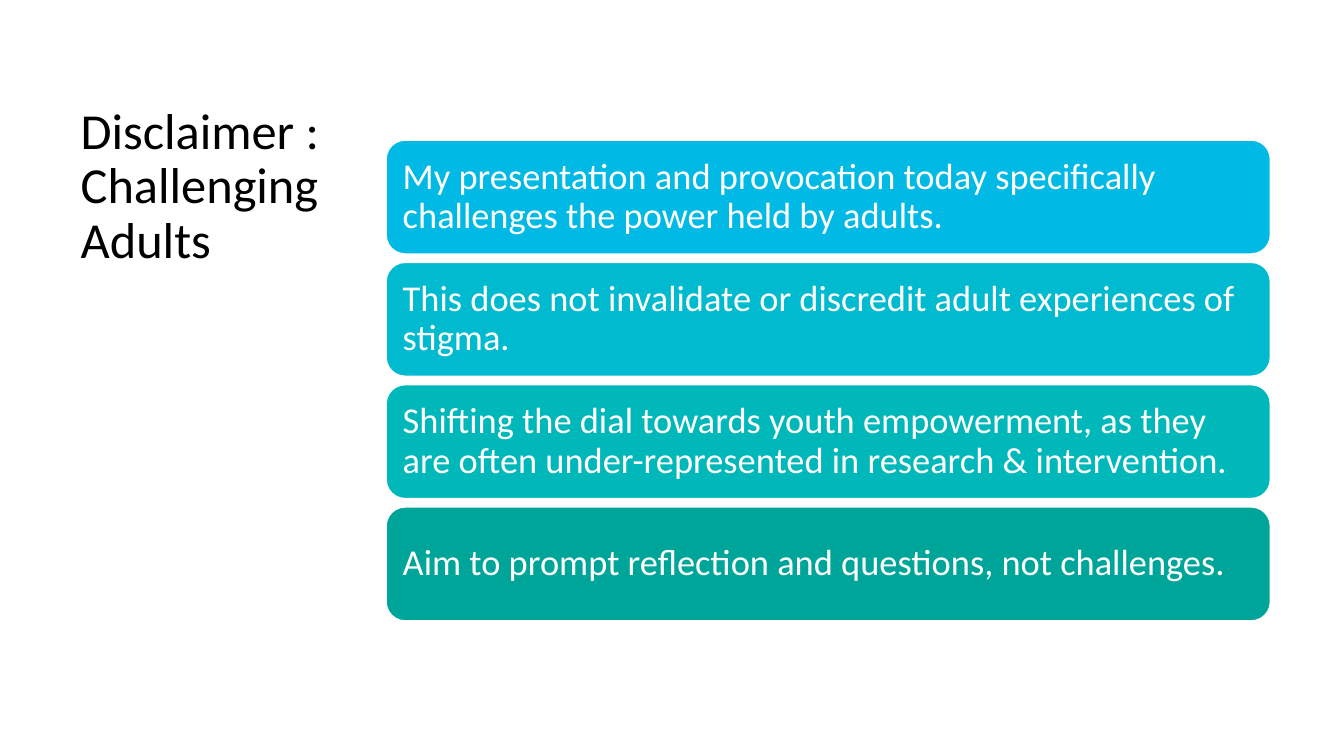
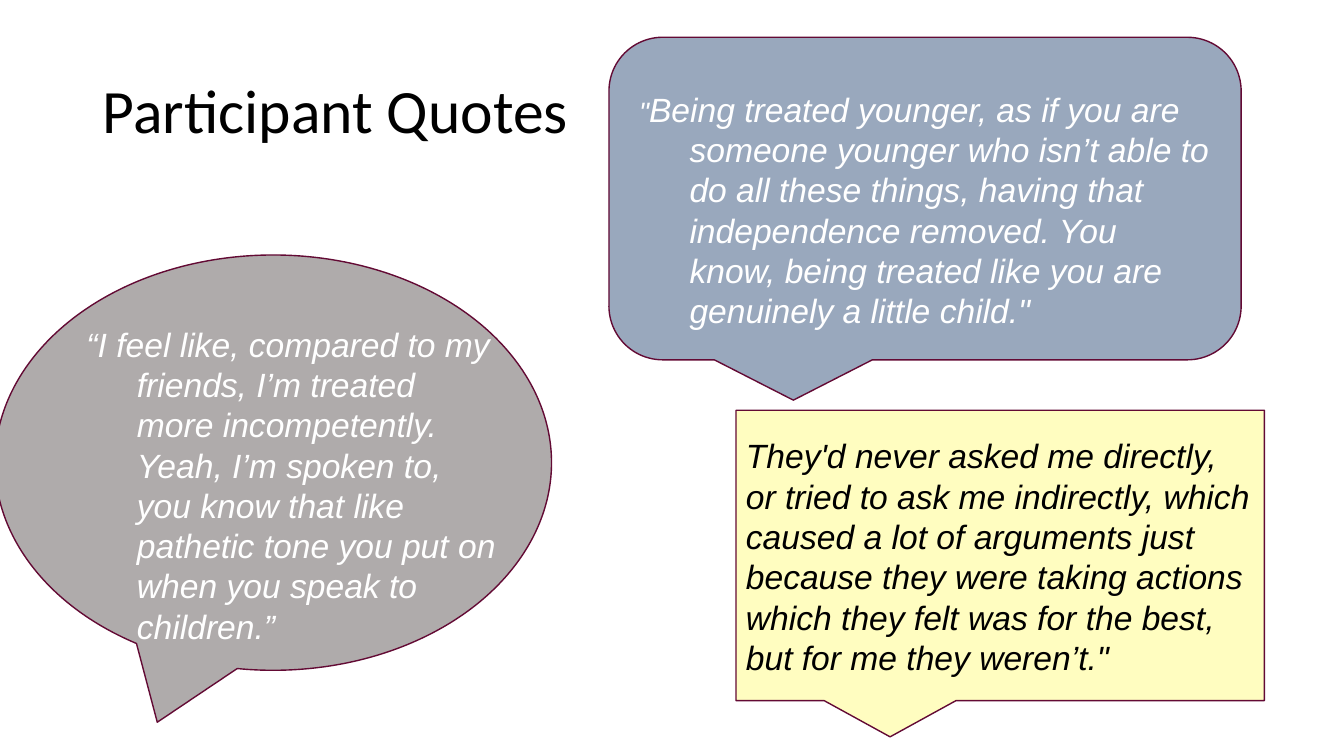
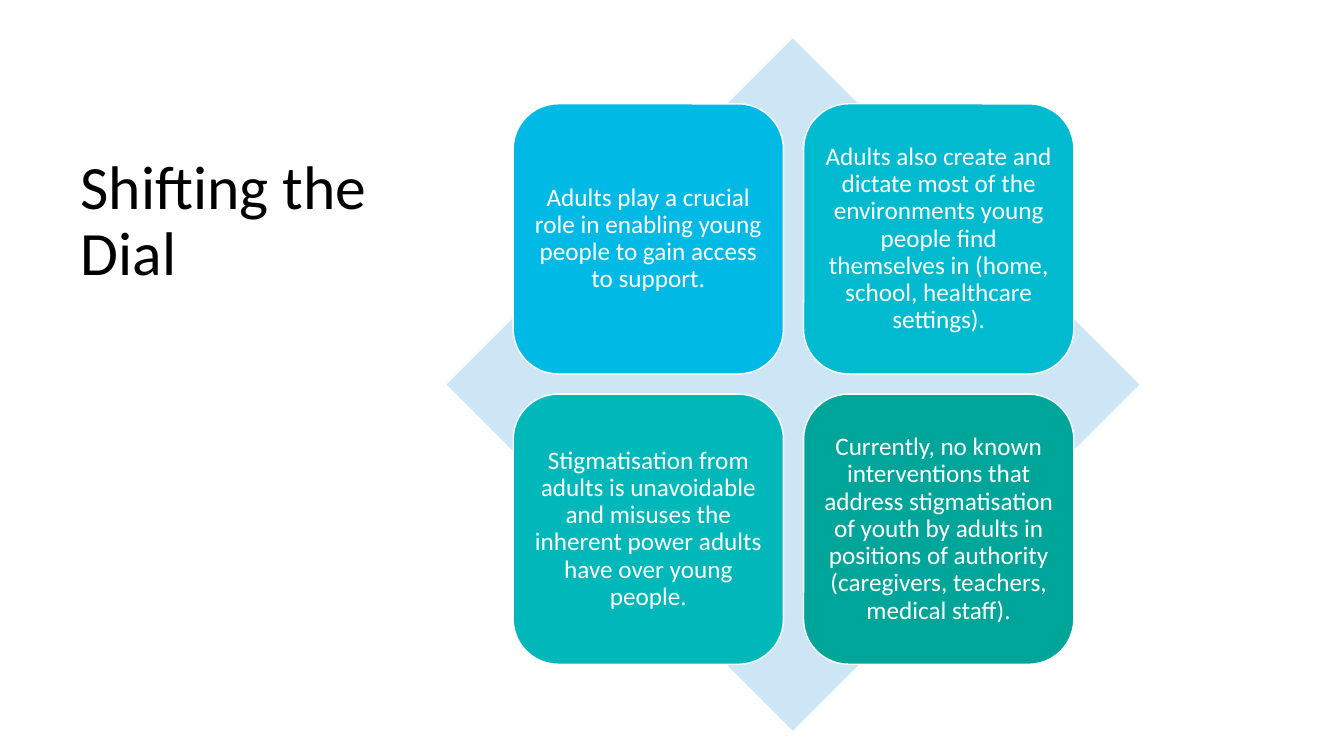
from dataclasses import dataclass

from pptx import Presentation
from pptx.dml.color import RGBColor
from pptx.enum.shapes import MSO_SHAPE
from pptx.enum.text import MSO_ANCHOR, MSO_AUTO_SIZE, PP_ALIGN
from pptx.util import Inches, Pt

ROUND_RECT, DIAMOND = MSO_SHAPE.ROUNDED_RECTANGLE, MSO_SHAPE.DIAMOND
ROUND_CALLOUT = MSO_SHAPE.ROUNDED_RECTANGULAR_CALLOUT
OVAL_CALLOUT = MSO_SHAPE.OVAL_CALLOUT
RECT_CALLOUT = MSO_SHAPE.RECTANGULAR_CALLOUT
TOP, MIDDLE = MSO_ANCHOR.TOP, MSO_ANCHOR.MIDDLE
LEFT, CENTER = PP_ALIGN.LEFT, PP_ALIGN.CENTER
NO_FIT = MSO_AUTO_SIZE.NONE
TITLE_ONLY = 5


@dataclass(frozen=True)
class Theme:
    head_font: str = "Calibri"
    quote_font: str = "Arial"
    ink: str = "000000"
    paper: str = "FFFFFF"
    steps: tuple = ("00B9E4", "00BACF", "00B7BA", "00A599")
    diamond: str = "CCE6F5"
    callout_line: str = "630A34"
    blue_grey: str = "99A8BD"
    grey: str = "AFABAB"
    yellow: str = "FFFDC0"
    title: int = 44
    small_title: int = 36
    bar: int = 26
    tile: int = 18
    quote: int = 24
    quote_mark: int = 20
    tight: float = 0.9


class Deck:
    """Holds the style and the slide being built."""

    def __init__(self, theme):
        self.theme = theme
        self.prs = Presentation()
        self.prs.slide_width, self.prs.slide_height = Inches(13.33), Inches(7.5)
        self.slide = None

    def run(self, p, text, font, size, color, italic=False):
        r = p.add_run()
        r.text = text
        r.font.name, r.font.size, r.font.italic = font, Pt(size), italic
        r.font.color.rgb = RGBColor.from_string(color)

    def new_slide(self, title, box, size, anchor=TOP):
        """Add a slide and set its title."""
        t = self.theme
        self.slide = self.prs.slides.add_slide(self.prs.slide_layouts[TITLE_ONLY])
        sp = self.slide.shapes.title
        sp.left, sp.top, sp.width, sp.height = map(Inches, box)
        tf = sp.text_frame
        tf.word_wrap, tf.auto_size, tf.vertical_anchor = True, NO_FIT, anchor
        p = tf.paragraphs[0]
        p.alignment, p.line_spacing = LEFT, t.tight
        self.run(p, title, t.head_font, size, t.ink)

    def shape(self, kind, box, fill, line=None):
        sp = self.slide.shapes.add_shape(kind, *map(Inches, box))
        sp.shadow.inherit = False
        sp.fill.solid()
        sp.fill.fore_color.rgb = RGBColor.from_string(fill)
        if line:
            sp.line.color.rgb = RGBColor.from_string(line)
            sp.line.width = Pt(1)
        else:
            sp.line.fill.background()
        return sp

    def card(self, box, fill, text, size, inset, align):
        """Rounded box with white text inside."""
        t = self.theme
        tf = self.shape(ROUND_RECT, box, fill, t.paper).text_frame
        tf.word_wrap, tf.vertical_anchor = True, MIDDLE
        tf.margin_left = tf.margin_right = Inches(inset)
        tf.margin_top = tf.margin_bottom = Inches(inset)
        p = tf.paragraphs[0]
        p.alignment, p.line_spacing = align, t.tight
        self.run(p, text, t.head_font, size, t.paper)

    def quote(self, box, parts, color, hanging=0):
        """Italic text box; parts are (text, size) pairs."""
        tf = self.slide.shapes.add_textbox(*map(Inches, box)).text_frame
        tf.word_wrap = True
        p = tf.paragraphs[0]
        if hanging:
            pPr = p._p.get_or_add_pPr()
            pPr.set("marL", str(Inches(hanging)))
            pPr.set("indent", str(-Inches(hanging)))
        for text, size in parts:
            self.run(p, text, self.theme.quote_font, size, color, italic=True)


def disclaimer(deck):
    t = deck.theme
    deck.new_slide("Disclaimer : Challenging Adults", (0.7, 1, 3.28, 4.55), t.small_title)
    # Stacked bars
    bars = (
        "My presentation and provocation today specifically challenges the power held by adults.",
        "This does not invalidate or discredit adult experiences of stigma.",
        "Shifting the dial towards youth empowerment, as they are often "
        "under-represented in research & intervention.",
        "Aim to prompt reflection and questions, not challenges.",
    )
    first, last = 1.39, 5.03
    pitch = (last - first) / (len(bars) - 1)
    for i, (text, fill) in enumerate(zip(bars, t.steps)):
        deck.card((3.83, first + i * pitch, 8.77, 1.13), fill, text, t.bar, 0.11, LEFT)


def quotes(deck):
    t = deck.theme
    deck.new_slide("Participant Quotes", (0.92, 0.4, 11.5, 1.45), t.title, MIDDLE)
    # Speech bubbles
    for kind, box, fill in (
        (ROUND_CALLOUT, (6.04, 0.37, 6.27, 3.2), t.blue_grey),
        (OVAL_CALLOUT, (-0.05, 2.53, 5.52, 4.12), t.grey),
        (RECT_CALLOUT, (7.3, 4.07, 5.24, 2.88), t.yellow),
    ):
        deck.shape(kind, box, fill, t.callout_line)
    # Spoken words
    deck.quote((7.3, 4.27, 5.24, 2.52), [(
        "They'd never asked me directly, or tried to ask me indirectly, which caused a lot "
        "of arguments just because they were taking actions which they felt was for the "
        "best, but for me they weren’t.\"", t.quote)], t.ink)
    deck.quote((6.24, 0.83, 5.85, 2.52), [("\"", t.quote_mark), (
        "Being treated younger, as if you are someone younger who isn’t able to do all "
        "these things, having that independence removed. You know, being treated like you "
        "are genuinely a little child.\"", t.quote)], t.paper, hanging=0.5)
    deck.quote((0.76, 3.16, 4.26, 2.93), [(
        "“I feel like, compared to my friends, I’m treated more incompetently. Yeah, I’m "
        "spoken to, you know that like pathetic tone you put on when you speak to "
        "children.”", t.quote)], t.paper, hanging=0.5)


def shifting_the_dial(deck):
    t = deck.theme
    deck.new_slide("Shifting the Dial", (0.7, 1.5, 4.02, 4.29), t.title)
    # Diamond behind a two by two grid
    deck.shape(DIAMOND, (4.43, 0.38, 6.87, 6.87), t.diamond)
    tiles = (
        "Adults play a crucial role in enabling young people to gain access to support.",
        "Adults also create and dictate most of the environments young people find "
        "themselves in (home, school, healthcare settings).",
        "Stigmatisation from adults is unavoidable and misuses the inherent power adults "
        "have over young people.",
        "Currently, no known interventions that address stigmatisation of youth by adults "
        "in positions of authority (caregivers, teachers, medical staff).",
    )
    side, gap = 2.68, 0.2
    for i, (text, fill) in enumerate(zip(tiles, t.steps)):
        row, col = divmod(i, 2)
        box = (5.09 + col * (side + gap), 1.03 + row * (side + gap), side, side)
        deck.card(box, fill, text, t.tile, 0.07, CENTER)


def main():
    deck = Deck(Theme())
    for build in (disclaimer, quotes, shifting_the_dial):
        build(deck)
    deck.prs.save("out.pptx")


if __name__ == "__main__":
    main()
